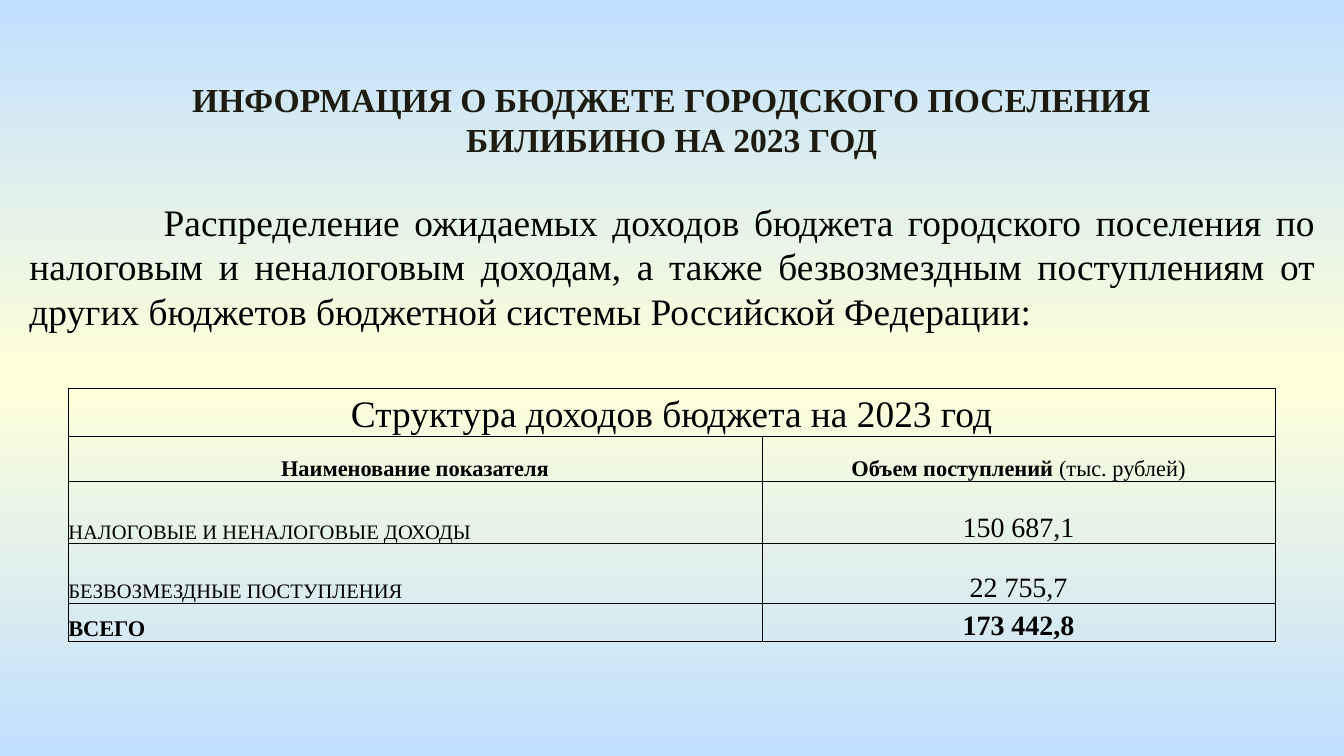
from copy import deepcopy

from lxml.etree import SubElement
from pptx import Presentation
from pptx.dml.color import RGBColor
from pptx.enum.text import MSO_ANCHOR as Anchor, MSO_AUTO_SIZE as AutoSize, PP_ALIGN as Align
from pptx.oxml.ns import qn
from pptx.util import Cm, Pt

BLACK = RGBColor(0x00, 0x00, 0x00)
TITLE_COLOR = RGBColor(0x1E, 0x1C, 0x11)
SKY = RGBColor(0xC1, 0xE0, 0xFF)
CREAM = RGBColor(0xFF, 0xFF, 0xD9)
FONT = "Times New Roman"

TITLE = "ИНФОРМАЦИЯ О БЮДЖЕТЕ ГОРОДСКОГО ПОСЕЛЕНИЯ БИЛИБИНО НА 2023 ГОД"
INTRODUCTION = (
    "Распределение ожидаемых доходов бюджета городского поселения по налоговым "
    "и неналоговым доходам, а также безвозмездным поступлениям от других бюджетов "
    "бюджетной системы Российской Федерации:"
)
TABLE_TITLE = "Структура доходов бюджета на 2023 год"
COLUMN_WIDTHS = (13.11, 9.7)
ROW_HEIGHTS = (0.9, 0.86, 1.18, 1.12, 0.72)
INCOME_ROWS = (
    ("НАЛОГОВЫЕ И НЕНАЛОГОВЫЕ ДОХОДЫ", "150 687,1", 11, False),
    ("БЕЗВОЗМЕЗДНЫЕ ПОСТУПЛЕНИЯ", "22 755,7", 11, False),
    ("ВСЕГО", "173 442,8", 12, True),
)


def apply_format(target, values):
    for name, value in values.items():
        setattr(target, name, value)


def add_run(paragraph, text, size, bold=False, color=BLACK):
    run = paragraph.add_run()
    run.text = text
    apply_format(run.font, {"name": FONT, "size": Pt(size), "bold": bold})
    run.font.color.rgb = color


def paint_background(slide):
    fill = slide.background.fill
    fill.gradient()
    fill.gradient_angle = 270
    stop_list = slide.element.find(".//" + qn("a:gsLst"))
    stop_list.insert(1, deepcopy(stop_list[0]))
    for stop, position, color in zip(fill.gradient_stops, (0, 0.5, 1), (SKY, CREAM, SKY)):
        stop.position = position
        stop.color.rgb = color


def fill_placeholder(shape, box, alignment, anchor):
    for name, length in zip(("left", "top", "width", "height"), box):
        setattr(shape, name, Cm(length))
    apply_format(shape.text_frame, {
        "word_wrap": True, "auto_size": AutoSize.NONE, "vertical_anchor": anchor,
    })
    paragraph = shape.text_frame.paragraphs[0]
    apply_format(paragraph, {
        "alignment": alignment, "line_spacing": 1.0, "space_before": Pt(0),
    })
    return paragraph


def indent_first_line(paragraph, indent):
    properties = paragraph._p.get_or_add_pPr()
    properties.set("marL", "0")
    properties.set("indent", str(indent))
    SubElement(properties, qn("a:buNone"))


def add_borders(cell):
    properties = cell._tc.get_or_add_tcPr()
    for side in ("a:lnL", "a:lnR", "a:lnT", "a:lnB"):
        line = SubElement(properties, qn(side), w=str(Pt(0.5)))
        fill = SubElement(line, qn("a:solidFill"))
        SubElement(fill, qn("a:srgbClr"), val=str(BLACK))


def fill_cell(cell, alignment, *runs):
    paragraph = cell.text_frame.paragraphs[0]
    paragraph.alignment = alignment
    for text, size, bold in runs:
        add_run(paragraph, text, size, bold)


def add_income_table(slide):
    frame = slide.shapes.add_table(
        len(ROW_HEIGHTS), len(COLUMN_WIDTHS), Cm(1.29), Cm(7.34),
        Cm(sum(COLUMN_WIDTHS)), Cm(sum(ROW_HEIGHTS)),
    )
    table = frame.table
    apply_format(table, {"first_row": False, "horz_banding": False})
    for column, width in zip(table.columns, COLUMN_WIDTHS):
        column.width = Cm(width)
    for row, height in zip(table.rows, ROW_HEIGHTS):
        row.height = Cm(height)
    for cell in table.iter_cells():
        apply_format(cell, {
            "margin_left": 0, "margin_right": 0, "margin_top": 0, "margin_bottom": 0,
            "vertical_anchor": Anchor.BOTTOM,
        })
        add_borders(cell)
        cell.fill.background()

    table.cell(0, 0).merge(table.cell(0, 1))
    fill_cell(table.cell(0, 0), Align.CENTER, (TABLE_TITLE, 20, False))
    fill_cell(table.cell(1, 0), Align.CENTER, ("Наименование показателя", 12, True))
    fill_cell(table.cell(1, 1), Align.CENTER,
              ("Объем поступлений ", 12, True), ("(тыс. рублей)", 12, False))
    for index, (label, amount, size, bold) in enumerate(INCOME_ROWS, start=2):
        fill_cell(table.cell(index, 0), Align.LEFT, (label, size, bold))
        fill_cell(table.cell(index, 1), Align.CENTER, (amount, 15, bold))


def main():
    presentation = Presentation()
    apply_format(presentation, {"slide_width": Cm(25.4), "slide_height": Cm(14.29)})
    slide = presentation.slides.add_slide(presentation.slide_layouts[1])
    paint_background(slide)

    title = fill_placeholder(
        slide.shapes.title, (2.88, 1.35, 19.63, 1.8), Align.CENTER, Anchor.MIDDLE)
    add_run(title, TITLE, 18, True, TITLE_COLOR)

    body = slide.placeholders[1]
    body.element.set("useBgFill", "1")
    introduction = fill_placeholder(
        body, (0.3, 3.63, 24.82, 2.82), Align.JUSTIFY, Anchor.TOP)
    indent_first_line(introduction, Cm(2.54))
    add_run(introduction, INTRODUCTION, 20)

    add_income_table(slide)
    presentation.save("out.pptx")


if __name__ == "__main__":
    main()
